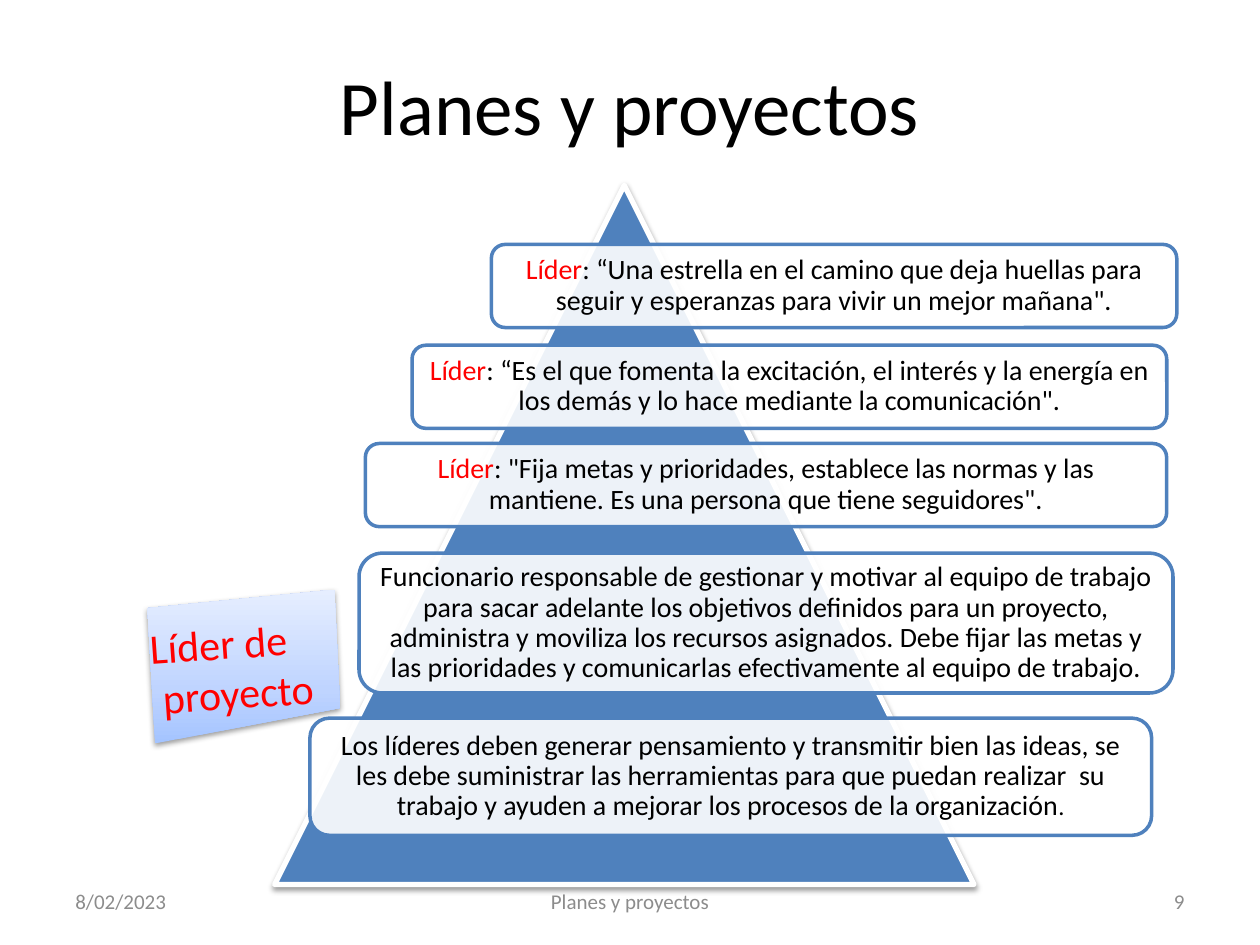
import copy

import pptx
import pptx.dml.color
import pptx.enum.dml
import pptx.enum.shapes
import pptx.enum.text
import pptx.oxml
import pptx.oxml.ns
import pptx.util

FONT = "Calibri"
COLORS = {
    "text": "000000", "accent": "FF0000", "muted": "8C8C8C",
    "blue": "4F81BD", "white": "FFFFFF",
    "sign": (("A4C4FF", 0), ("BFD4FF", 0.35), ("E6EEFF", 1)),
}
ALIGN = pptx.enum.text.PP_ALIGN
SHAPE = pptx.enum.shapes.MSO_SHAPE
IN = pptx.util.Inches

# Box (left, top, width, height) and runs of each card, from the top down
CARDS = [
    ((3.9, 1.94, 5.44, 0.66), [("Líder", "accent", 16), (
        ": “Una estrella en el camino que deja huellas para seguir y "
        "esperanzas para vivir un mejor mañana\".", "text", 16)]),
    ((3.27, 2.74, 5.99, 0.66), [("Líder", "accent", 16), (
        ": “Es el que fomenta la excitación, el interés y la energía en los "
        "demás y lo hace mediante la comunicación\".", "text", 16)]),
    ((2.9, 3.52, 6.36, 0.66), [("Líder", "accent", 16), (
        ": \"Fija metas y prioridades, establece las normas y las mantiene. "
        "Es una persona que tiene seguidores\".", "text", 16)]),
    ((2.85, 4.39, 6.46, 1.11), [(
        "Funcionario responsable de gestionar y motivar al equipo de trabajo "
        "para sacar adelante los objetivos definidos para un proyecto, "
        "administra y moviliza los recursos asignados. Debe fijar las metas y "
        "las prioridades y comunicarlas efectivamente al equipo de trabajo.",
        "text", 16)]),
    ((2.46, 5.7, 6.68, 0.93), [(
        "Los líderes deben generar pensamiento y transmitir bien las ideas, "
        "se les debe suministrar las herramientas para que puedan realizar  su "
        "trabajo y ayuden a mejorar los procesos de la organización",
        "text", 16), (".", "text", 14)]),
]


def rgb(name):
    return pptx.dml.color.RGBColor.from_string(COLORS[name])


def inches(box):
    return [IN(v) for v in box]


def write(tf, paragraphs, align, inset=(0.1, 0.05), spacing=None):
    """Fill a text frame; each paragraph is a list of (text, color, size)."""
    tf.word_wrap = True
    tf.vertical_anchor = pptx.enum.text.MSO_ANCHOR.MIDDLE
    tf.margin_left = tf.margin_right = IN(inset[0])
    tf.margin_top = tf.margin_bottom = IN(inset[1])
    for i, runs in enumerate(paragraphs):
        p = tf.add_paragraph() if i else tf.paragraphs[0]
        p.alignment = align
        if spacing:
            p.line_spacing = spacing
        for text, color, size in runs:
            r = p.add_run()
            r.text = text
            r.font.name = FONT
            r.font.size = pptx.util.Pt(size)
            r.font.color.rgb = rgb(color)


def add_shadow(sp):
    """Give the shape a soft shadow just below it."""
    sp.shadow.inherit = False
    effects = sp.element.spPr.find(pptx.oxml.ns.qn("a:effectLst"))
    effects.append(pptx.oxml.parse_xml(
        f'<a:outerShdw {pptx.oxml.ns.nsdecls("a")} blurRad="40000" '
        'dist="20000" dir="5400000" rotWithShape="0"><a:srgbClr val="000000">'
        '<a:alpha val="38000"/></a:srgbClr></a:outerShdw>'))


def add_title(s, box):
    title = s.shapes.title
    title.left, title.top, title.width, title.height = inches(box)
    write(title.text_frame, [[("Planes y proyectos", "text", 44)]], ALIGN.CENTER)


def add_footer(s, box):
    left, top, width, height = box
    parts = (("8/02/2023", 0, 0.26, ALIGN.LEFT),
             ("Planes y proyectos", 0.32, 0.36, ALIGN.CENTER),
             ("9", 0.74, 0.26, ALIGN.RIGHT))
    for text, start, share, align in parts:
        tb = s.shapes.add_textbox(*inches(
            (left + start * width, top, share * width, height)))
        write(tb.text_frame, [[(text, "muted", 12)]], align)


def add_sign(s, box):
    """Draw the tilted panel that names the project leader."""
    left, top, width, height = box
    corners = [(IN(left + x * width), IN(top + y * height))
               for x, y in ((0, 0.12), (0.97, 0), (1, 0.77), (0.04, 1))]
    builder = s.shapes.build_freeform(*corners[0], scale=1.0)
    builder.add_line_segments(corners[1:], close=True)
    sp = builder.convert_to_shape()
    sp.fill.gradient()
    sp.fill.gradient_angle = 90
    stops = sp.element.spPr.find(".//" + pptx.oxml.ns.qn("a:gsLst"))
    stops.append(copy.deepcopy(stops[0]))
    for stop, (color, position) in zip(sp.fill.gradient_stops, COLORS["sign"]):
        stop.position = position
        stop.color.rgb = pptx.dml.color.RGBColor.from_string(color)
    sp.line.fill.background()
    add_shadow(sp)
    tb = s.shapes.add_textbox(*inches(
        (left + 0.02 * width, top + 0.1 * height, 0.96 * width, 0.8 * height)))
    tb.rotation = -4
    write(tb.text_frame, [[("Líder de", "accent", 24)],
                          [(" proyecto", "accent", 24)]], ALIGN.LEFT, (0, 0))


def add_pyramid(s, box):
    sp = s.shapes.add_shape(SHAPE.ISOSCELES_TRIANGLE, *inches(box))
    sp.fill.solid()
    sp.fill.fore_color.rgb = rgb("blue")
    sp.line.color.rgb = rgb("white")
    sp.line.width = pptx.util.Pt(3)
    add_shadow(sp)


def add_card(s, box, runs):
    sp = s.shapes.add_shape(SHAPE.ROUNDED_RECTANGLE, *inches(box))
    sp.shadow.inherit = False
    sp.fill.solid()
    sp.fill.fore_color.rgb = rgb("white")
    fill = sp.element.spPr.find(".//" + pptx.oxml.ns.qn("a:srgbClr"))
    fill.append(pptx.oxml.parse_xml(
        f'<a:alpha {pptx.oxml.ns.nsdecls("a")} val="90000"/>'))
    sp.line.color.rgb = rgb("blue")
    sp.line.width = pptx.util.Pt(2)
    write(sp.text_frame, [runs], ALIGN.CENTER, (0.07, 0.07), 0.9)


def main():
    prs = pptx.Presentation()
    prs.slide_width, prs.slide_height = IN(10), IN(7.5)
    s = prs.slides.add_slide(prs.slide_layouts.get_by_name("Title Only"))
    add_title(s, (0.5, 0.21, 9, 1.25))
    add_footer(s, (0.5, 6.95, 9, 0.4))
    add_sign(s, (1.17, 4.68, 1.53, 1.22))
    add_pyramid(s, (2.18, 1.47, 5.55, 5.55))
    for box, runs in CARDS:
        add_card(s, box, runs)
    prs.save("out.pptx")


if __name__ == "__main__":
    main()
